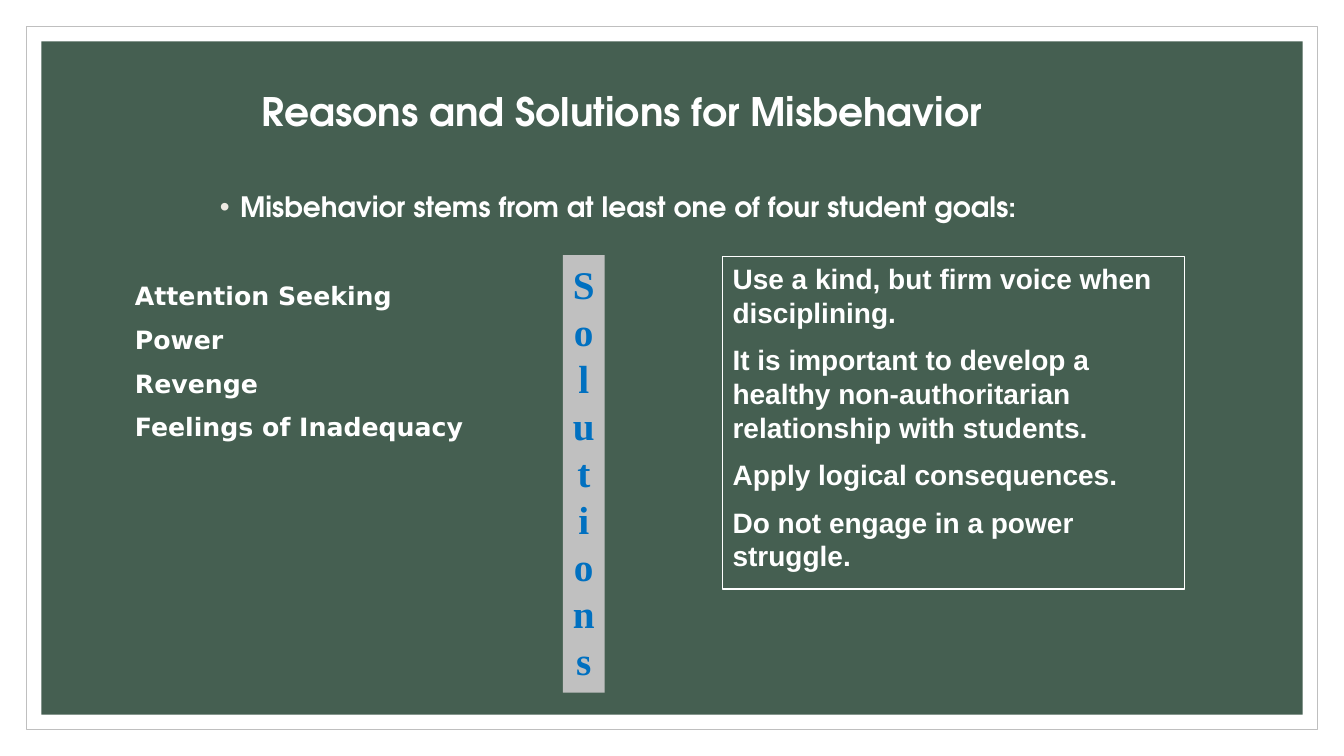
from lxml import etree
from pptx import Presentation
from pptx.dml.color import RGBColor
from pptx.enum.shapes import MSO_SHAPE
from pptx.enum.text import MSO_ANCHOR, PP_ALIGN
from pptx.oxml.ns import qn
from pptx.util import Pt

RECT = MSO_SHAPE.RECTANGLE
LEFT, CENTER = PP_ALIGN.LEFT, PP_ALIGN.CENTER
TOP, MIDDLE = MSO_ANCHOR.TOP, MSO_ANCHOR.MIDDLE

WHITE, GREEN, GREY, SILVER = "FFFFFF", "455F51", "BFBFBF", "C0C0C0"
BLUE, CREAM = "0070C0", "EEEBE3"
HEADING_FONT = "TeX Gyre Adventor"

SLIDE_W, SLIDE_H = 960, 540
GOALS = ["Attention Seeking", "Power", "Revenge", "Feelings of Inadequacy"]
SOLUTIONS = [
    "Use a kind, but firm voice when disciplining.",
    "It is important to develop a healthy non-authoritarian relationship with students.",
    "Apply logical consequences.",
    "Do not engage in a power struggle.",
]


def rgb(color):
    return RGBColor.from_string(color)


def add_rect(s, box, fill=None, line=None, width=1):
    sp = s.shapes.add_shape(RECT, *map(Pt, box))
    sp.shadow.inherit = False
    if fill:
        sp.fill.solid()
        sp.fill.fore_color.rgb = rgb(fill)
    else:
        sp.fill.background()
    if line:
        sp.line.color.rgb = rgb(line)
        sp.line.width = Pt(width)
    else:
        sp.line.fill.background()
    return sp


def add_textbox(s, box):
    return s.shapes.add_textbox(*map(Pt, box))


def write(sp, lines, size, font, color=WHITE, align=LEFT, anchor=TOP, gap=0, spacing=1.0):
    """Fill a shape with bold paragraphs, with gap points after each."""
    tf = sp.text_frame
    tf.word_wrap = True
    tf.vertical_anchor = anchor
    for i, line in enumerate(lines):
        p = tf.add_paragraph() if i else tf.paragraphs[0]
        p.alignment = align
        p.space_after = Pt(gap)
        p.line_spacing = spacing
        r = p.add_run()
        r.text = line
        r.font.size = Pt(size)
        r.font.name = font
        r.font.bold = True
        r.font.color.rgb = rgb(color)


def add_bullet(p, color, indent):
    pPr = p._p.get_or_add_pPr()
    pPr.set("marL", str(Pt(indent)))
    pPr.set("indent", str(-Pt(indent)))
    bu_color = etree.SubElement(pPr, qn("a:buClr"))
    etree.SubElement(bu_color, qn("a:srgbClr")).set("val", color)
    etree.SubElement(pPr, qn("a:buFont")).set("typeface", "Arial")
    etree.SubElement(pPr, qn("a:buChar")).set("char", "•")


def draw_frame(s, box):
    x, y, w, h = box
    for inset, fill, line in ((18.7, WHITE, GREY), (29.5, GREEN, None)):
        inner = (x + inset, y + inset, w - 2 * inset, h - 2 * inset)
        add_rect(s, inner, fill, line, 0.5)


def draw_heading(s, box):
    x, y, w, h = box
    title = add_textbox(s, (x + 30, y, w - 30, 38))
    write(title, ["Reasons and Solutions for Misbehavior"], 28, HEADING_FONT,
          anchor=MIDDLE, spacing=0.9)
    intro = add_textbox(s, (x, y + 72, 612, h - 72))
    write(intro, ["Misbehavior stems from at least one of four student goals:"], 20,
          HEADING_FONT, spacing=0.9)
    add_bullet(intro.text_frame.paragraphs[0], CREAM, 14.4)


def draw_columns(s, box):
    x, y, w, h = box
    # Goals on the left
    goals = add_textbox(s, (x, y + 14.4, 271, 160))
    write(goals, GOALS, 18, "DejaVu Sans", gap=9.7)
    # Narrow banner, one letter to a line
    banner = add_rect(s, (x + 312.7, y, 30, h), SILVER)
    write(banner, ["Solutions"], 28, "Times New Roman", BLUE, CENTER)
    # Outlined solutions on the right
    panel = add_rect(s, (x + w - 330, y + 1, 330, 237.6), line=WHITE)
    write(panel, SOLUTIONS, 20, "Arial", gap=10)


def main():
    prs = Presentation()
    prs.slide_width, prs.slide_height = Pt(SLIDE_W), Pt(SLIDE_H)
    s = prs.slides.add_slide(prs.slide_layouts[6])
    draw_frame(s, (0, 0, SLIDE_W, SLIDE_H))
    draw_heading(s, (150, 62.5, 678, 156))
    draw_columns(s, (89.3, 182.3, 756.9, 312.5))
    prs.save("out.pptx")


if __name__ == "__main__":
    main()
